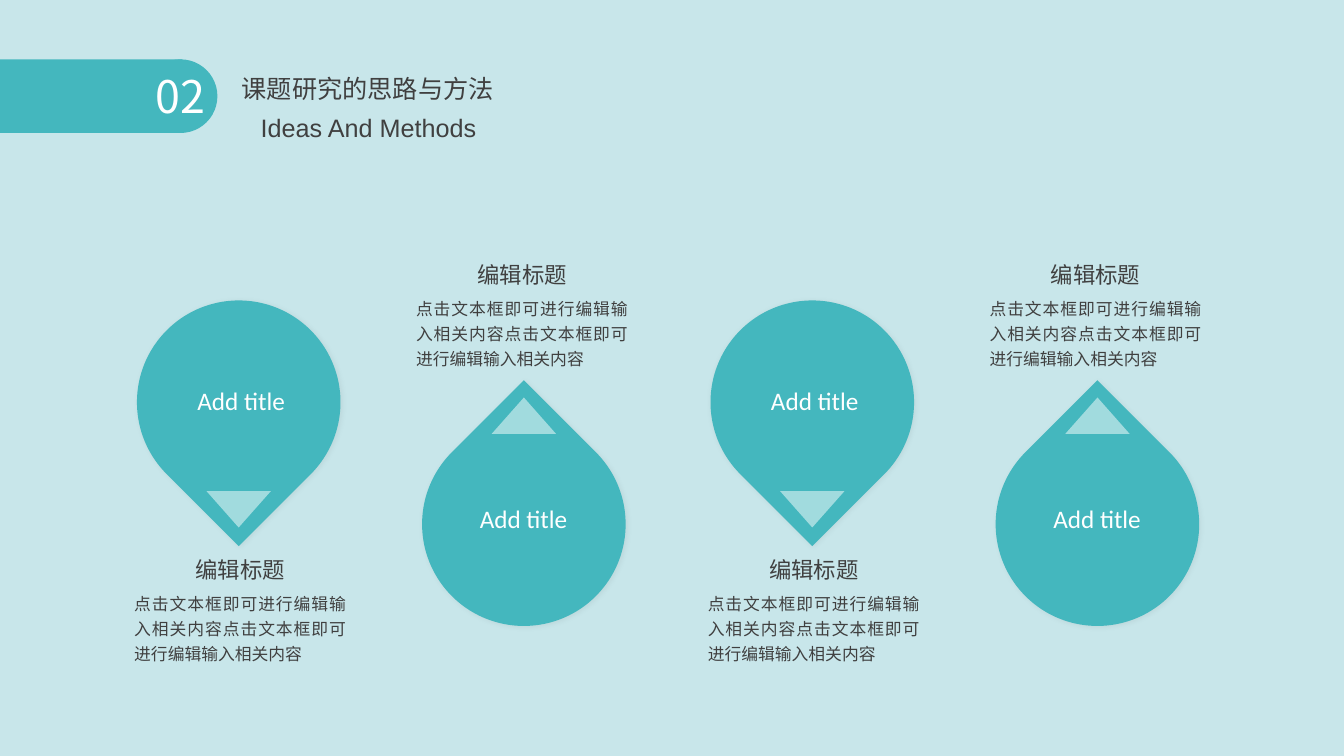
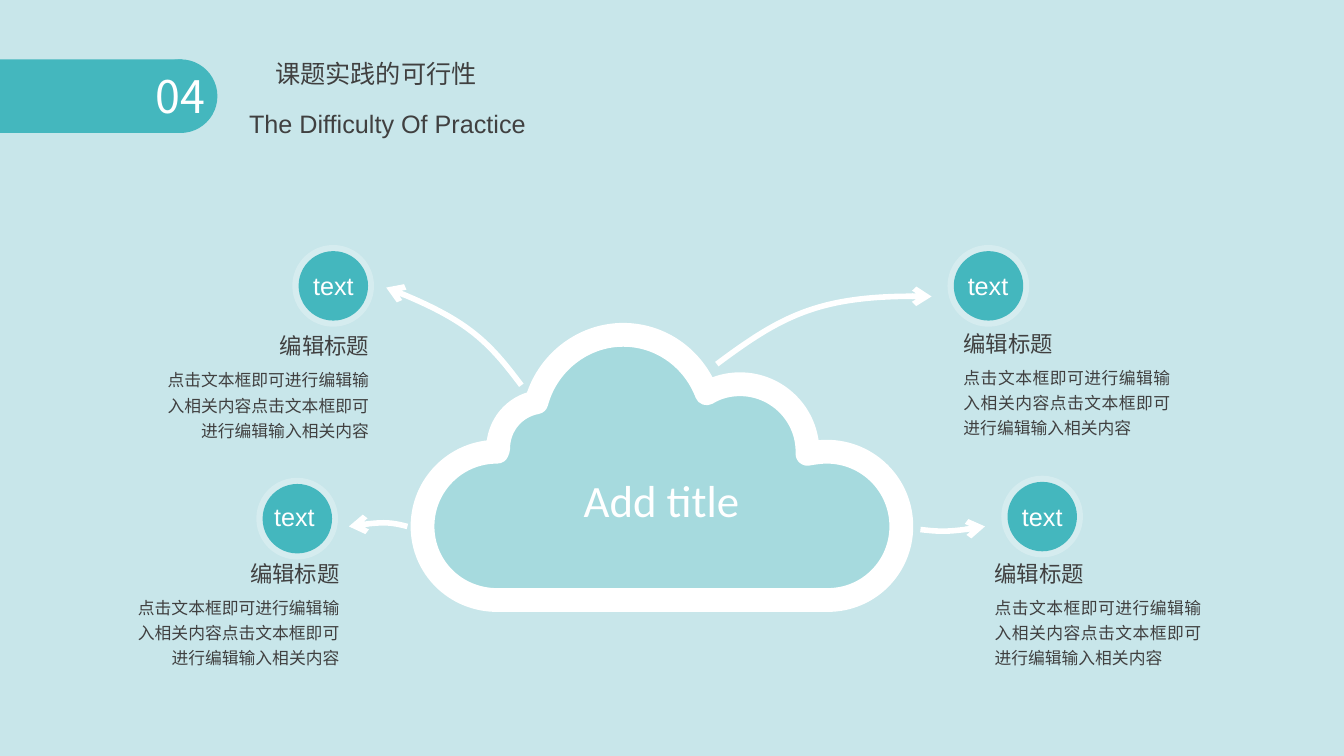
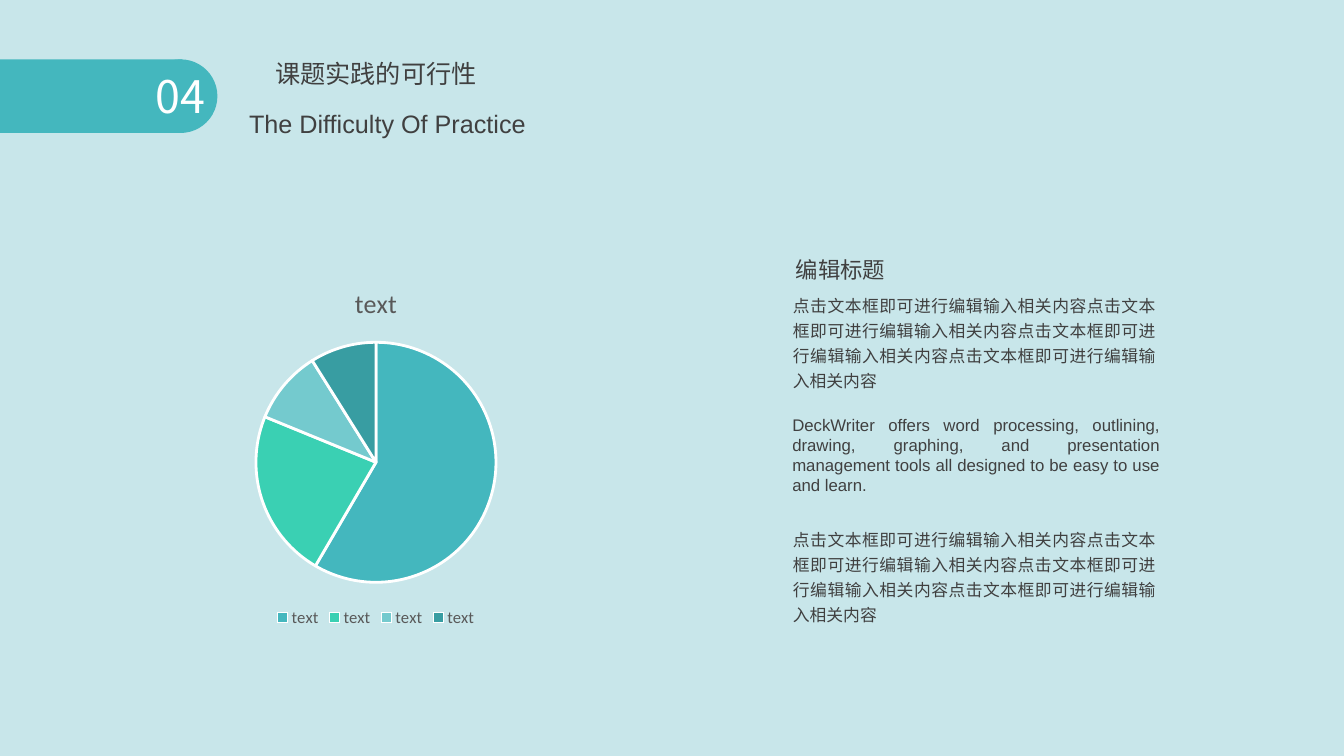
from math import cos, radians, sin
from lxml.etree import SubElement
from pptx import Presentation
from pptx.chart.data import CategoryChartData
from pptx.dml.color import RGBColor
from pptx.enum.chart import XL_CHART_TYPE, XL_LEGEND_POSITION
from pptx.enum.shapes import MSO_SHAPE
from pptx.enum.text import PP_ALIGN
from pptx.oxml.ns import qn
from pptx.util import Pt

TEAL, WHITE, INK, GRAY, SKY = "44B7BE", "FFFFFF", "404040", "595959", "C8E6EA"
SLICES = [TEAL, "3AD0B3", "74CACE", "389DA2"]
HAN, SANS, ROUND = "Noto Sans CJK SC", "Arial", "Calibri"
LEFT, MID, RIGHT, FULL = PP_ALIGN.LEFT, PP_ALIGN.CENTER, PP_ALIGN.RIGHT, PP_ALIGN.JUSTIFY
HEAD = "编辑标题"
PHRASE = "点击文本框即可进行编辑输入相关内容"
STORY = ("DeckWriter offers word processing, outlining, drawing, graphing, and "
         "presentation management tools all designed to be easy to use and learn. ")
CLOUD = [
    (342, 136.8),
    (342, 107.3, 318.2, 83.5, 288.7, 83.5),
    (284.4, 83.5, 279.4, 84.2, 275, 85),
    (275, 84.5, 275, 84, 275, 83.5),
    (275, 56.9, 253.4, 35.3, 226.8, 35.3),
    (218.2, 35.3, 210.2, 37.4, 203, 41.8),
    (193.7, 17.3, 170.6, 0, 143.3, 0),
    (113.8, 0, 88.6, 20.9, 81.4, 48.2),
    (65.5, 51.1, 54, 64.8, 54, 81.4),
    (54, 82, 54, 82.8, 53.3, 83.5),
    (23.8, 83.5, 0, 107.3, 0, 136.8),
    (0, 166.3, 23.8, 189.4, 53.3, 189.4),
    (289.4, 189.4, 289.4, 189.4, 289.4, 189.4),
    (319, 189.4, 342, 165.6, 342, 136.8),
]
ARROWS = [
    (282.1, [(70.6, 36), (47.5, 5, 30.2, -12.2, -25.9, -33.8)]),
    (103, [(210.2, 20.9), (255.6, -13, 285.8, -29.5, 363.6, -27.4)]),
    (257, [(-10.8, 136.8), (-22.3, 133.9, -30.2, 133.2, -52.6, 136.8)]),
    (257, [(355.7, 139), (367.9, 140.4, 377.3, 141.1, 401.8, 136.8)]),
]
NODES = [
    (208.8, 175, (-5.1, 18), 108.7, 257.2, RIGHT),
    (183.1, 341.3, (-7.3, 16.5), 87.6, 419.8, RIGHT),
    (676.8, 175, (-5.5, 18), 681.1, 255.4, FULL),
    (715.2, 339.8, (-5.2, 18), 703.3, 419.8, FULL),
]


def hue(code):
    """Turn a hex string into a colour."""
    return RGBColor.from_string(code)


def paint(shape, code, alpha=100):
    """Give a shape a flat fill of the given opacity."""
    shape.fill.solid()
    shape.fill.fore_color.rgb = hue(code)
    if alpha < 100:
        tint = shape.fill._xPr.find(qn("a:solidFill"))[0]
        SubElement(tint, qn("a:alpha"), val=str(alpha * 1000))


def form(slide, kind, box, code=None, alpha=100, turn=0):
    """Add a preset shape without outline or shadow."""
    shape = slide.shapes.add_shape(kind, *map(Pt, box))
    shape.shadow.inherit = False
    shape.line.fill.background()
    shape.rotation = turn
    if code:
        paint(shape, code, alpha)
    else:
        shape.fill.background()
    return shape


def style(font, face, size, code):
    """Set face, size and colour of a font."""
    font.name, font.size, font.bold = face, Pt(size), False
    font.color.rgb = hue(code)


def fill(frame, text, size, face=HAN, code=INK, align=MID, space=None):
    """Put one wrapped, styled paragraph in a frame."""
    frame.word_wrap = True
    frame.text = text
    para = frame.paragraphs[0]
    para.alignment, para.line_spacing = align, space
    run = para.runs[0]
    style(run.font, face, size, code)
    SubElement(run._r.get_or_add_rPr(), qn("a:ea"), typeface=face)


def write(slide, box, text, size, inset=True, **looks):
    """Add a text box with one paragraph."""
    frame = slide.shapes.add_textbox(*map(Pt, box)).text_frame
    if not inset:
        frame.margin_left = frame.margin_right = 0
        frame.margin_top = frame.margin_bottom = 0
    fill(frame, text, size, **looks)


def header(slide, num, title, box, sub, place, **looks):
    """Draw the numbered tab and both title lines."""
    top, size = 42.4, 52.6
    form(slide, MSO_SHAPE.RECTANGLE, (0, top, 130, size), TEAL)
    form(slide, MSO_SHAPE.OVAL, (102.7, top, size, size), TEAL)
    write(slide, (94.3, 45.4, 69, 46), num, 32, code=WHITE)
    write(slide, box, title, 18, **looks)
    plate = form(slide, MSO_SHAPE.SNIP_1_RECTANGLE, (*place, 395.3, 29))
    plate.adjustments[0] = 0
    fill(plate.text_frame, sub, 18, face=SANS)


def note(slide, x, y, wide, align, count=2, shift=(0, 0)):
    """Write a heading above body text that starts at y."""
    side = LEFT if align == FULL else align
    size = 104.4 if align == MID else 107.3
    edge = {LEFT: 0, MID: (wide - size) / 2, RIGHT: wide - size}[side]
    body = FULL if align == MID else align
    write(slide, (x, y, wide, 62 if count == 2 else 80), PHRASE * count, 12,
          align=body, space=1.25)
    write(slide, (x + edge + shift[0], y - 23.4 + shift[1], size, 26), HEAD, 16, align=side)


def pin(slide, x, y, down):
    """Draw a pin with its label, pointer and note."""
    size = 145.4
    turn, tip, mark, text, lead = (
        (135, 136.2, 0, (33.8, 57), (-9, 202.3)) if down
        else (315, -17.8, 180, (31.8, 54.4), (-11.4, -95.6)))
    drop = form(slide, MSO_SHAPE.TEAR, (x, y, size, size), TEAL, turn=turn)
    glow = SubElement(drop._element.spPr.find(qn("a:effectLst")), qn("a:outerShdw"),
                      blurRad=str(Pt(4)), dist=str(Pt(1)), dir="2700000", rotWithShape="0")
    dark = SubElement(glow, qn("a:srgbClr"), val="000000")
    SubElement(dark, qn("a:alpha"), val="5000")
    form(slide, MSO_SHAPE.FLOWCHART_MERGE, (x + 49.7, y + tip, 46, 26), WHITE, 50, mark)
    write(slide, (x + text[0], y + text[1], 81.4, 28), "Add title", 18, face=ROUND, code=WHITE)
    note(slide, x + lead[0], y + lead[1], 165.6, MID)


def spin(dot, turn):
    """Rotate a point clockwise about the origin."""
    c, s = cos(radians(turn)), sin(radians(turn))
    return dot[0] * c - dot[1] * s, dot[0] * s + dot[1] * c


def curve(slide, x, y, steps, width, turn=0, closed=False):
    """Draw a white Bezier outline relative to x and y."""
    flat = [n for step in steps for n in step]
    dots = [spin((x + a, y + b), -turn) for a, b in zip(flat[::2], flat[1::2])]
    mid = [(min(axis) + max(axis)) / 2 for axis in zip(*dots)]
    goal = spin(mid, turn)
    dots = [(Pt(a - mid[0] + goal[0]), Pt(b - mid[1] + goal[1])) for a, b in dots]
    pen = slide.shapes.build_freeform(*dots[0])
    pen.add_line_segments(dots[1:], close=closed)
    shape = pen.convert_to_shape()
    lines = list(shape._element.iter(qn("a:lnTo")))
    for i in range(0, len(lines), 3):
        bend = SubElement(lines[i].getparent(), qn("a:cubicBezTo"))
        lines[i].addprevious(bend)
        for line in lines[i:i + 3]:
            bend.append(line[0])
            line.getparent().remove(line)
    shape.rotation = turn
    shape.shadow.inherit = False
    shape.fill.background()
    shape.line.color.rgb = hue(WHITE)
    shape.line.width = Pt(width)
    SubElement(shape.line._get_or_add_ln(), qn("a:round"))
    return shape


def sky(slide, x, y):
    """Draw the cloud with its title and four arrows."""
    paint(curve(slide, x, y, CLOUD, 17, closed=True), TEAL, 25)
    for turn, steps in ARROWS:
        ray = curve(slide, x, y, steps, 4, turn)
        SubElement(ray.line._get_or_add_ln(), qn("a:tailEnd"), type="arrow")
    write(slide, (x + 106, y + 95, 129.6, 40), "Add title", 32, face=ROUND, code=WHITE)


def node(slide, x, y, lead):
    """Draw a ringed circle with a short label."""
    form(slide, MSO_SHAPE.OVAL, (x, y, 58.4, 58.4), WHITE, 25)
    form(slide, MSO_SHAPE.OVAL, (x + 4.5, y + 4.4, 49.6, 49.6), TEAL)
    write(slide, (x + lead[0], y + lead[1], 69, 17.3), "text", 18, inset=False,
          face=SANS, code=WHITE)


def pie(slide, box):
    """Add the pie chart with its title and legend."""
    data = CategoryChartData()
    data.categories = ["text"] * 4
    data.add_series("text", (59, 23, 10, 9))
    chart = slide.shapes.add_chart(XL_CHART_TYPE.PIE, *map(Pt, box), data).chart
    style(chart.font, ROUND, 10, "000000")
    chart.has_title = chart.has_legend = True
    frame = chart.chart_title.text_frame
    frame.text = "text"
    style(frame.paragraphs[0].runs[0].font, ROUND, 18.6, GRAY)
    chart.legend.position = XL_LEGEND_POSITION.BOTTOM
    chart.legend.include_in_layout = False
    style(chart.legend.font, ROUND, 11.9, GRAY)
    plot = chart.plots[0]
    plot.vary_by_categories = True
    for i, code in enumerate(SLICES):
        look = plot.series[0].points[i].format
        paint(look, code)
        look.line.color.rgb = hue(WHITE)
        look.line.width = Pt(2)


def column(slide, x, y, wide):
    """Write the text column beside the chart."""
    note(slide, x, y, wide, FULL, 4, (2, -0.8))
    write(slide, (x + 6.6, y + 92.2, wide - 10.8, 58), STORY, 12, inset=False,
          face=SANS, align=FULL)
    write(slide, (x, y + 167.2, wide, 80), PHRASE * 4, 12, align=FULL, space=1.25)


def sheet(deck):
    """Add a blank slide with the shared background."""
    slide = deck.slides.add_slide(deck.slide_layouts[6])
    paint(slide.background, SKY)
    return slide


def ideas(deck):
    """Build the slide with four pins."""
    slide = sheet(deck)
    header(slide, "02", "课题研究的思路与方法", (165.6, 27.4, 196.6, 44.6),
           "Ideas And Methods", (65.6, 76.3), align=LEFT, space=2)
    for i in range(4):
        pair, odd = divmod(i, 2)
        pin(slide, 97.8 + 409.7 * pair + 203.7 * odd, 301.7 if odd else 214.6, not odd)


def hurdle(deck):
    """Start a slide of the fourth part."""
    slide = sheet(deck)
    header(slide, "04", "课题实践的可行性", (73.6, 38.2, 390, 29),
           "The Difficulty Of Practice ", (81.6, 73.7))
    return slide


def causes(deck):
    """Build the slide with the cloud and its nodes."""
    slide = hurdle(deck)
    sky(slide, 301.8, 239.2)
    for x, y, lead, left, top, align in NODES:
        node(slide, x, y, lead)
        note(slide, left, top, 162, align)


def share(deck):
    """Build the slide with the chart and text."""
    slide = hurdle(deck)
    pie(slide, (73.6, 191.1, 390, 260))
    column(slide, 559.3, 203.8, 273.6)


def main():
    """Build and save the deck."""
    deck = Presentation()
    deck.slide_width, deck.slide_height = Pt(960), Pt(540)
    for build in (ideas, causes, share):
        build(deck)
    deck.save("out.pptx")


if __name__ == "__main__":
    main()
